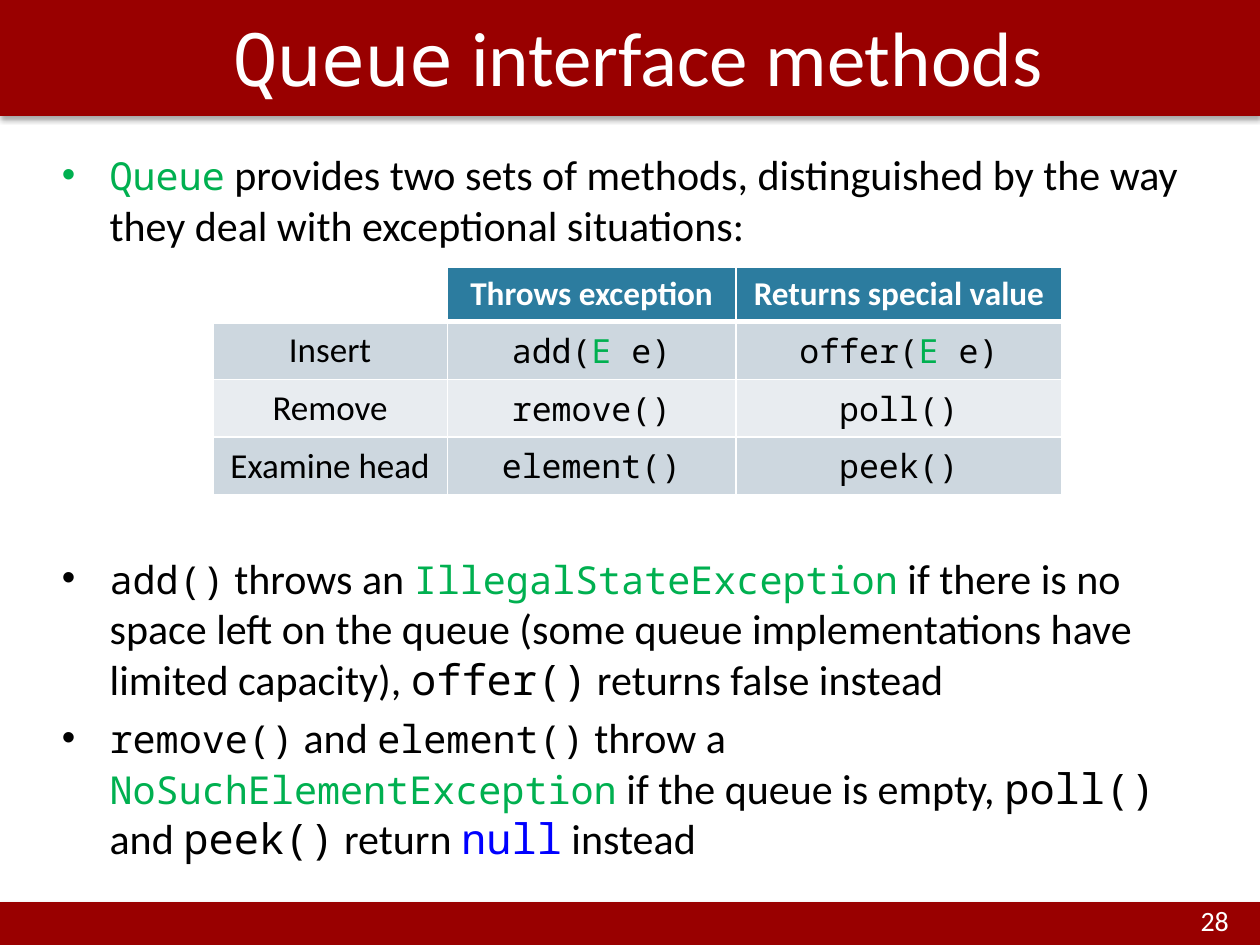
from lxml.etree import SubElement
from pptx import Presentation
from pptx.dml.color import RGBColor
from pptx.enum.shapes import MSO_SHAPE
from pptx.enum.text import MSO_ANCHOR, MSO_AUTO_SIZE, PP_ALIGN
from pptx.oxml import parse_xml
from pptx.oxml.ns import nsdecls, qn
from pptx.util import Inches, Pt

RED = RGBColor(0x99, 0x00, 0x00)
WHITE = RGBColor(0xFF, 0xFF, 0xFF)
BLACK = RGBColor(0x00, 0x00, 0x00)
GREEN = RGBColor(0x00, 0xB0, 0x50)
BLUE = RGBColor(0x00, 0x00, 0xFF)
TEAL = RGBColor(0x2C, 0x7C, 0x9F)
BANDS = (RGBColor(0xCD, 0xD7, 0xDF), RGBColor(0xE8, 0xEC, 0xF0))
SANS, MONO = "Calibri", "Noto Sans Mono"

PROSE = (SANS, 24, BLACK)
CODE = (MONO, 22, BLACK)
LARGE_CODE = (MONO, 24, BLACK)
CLASS = (MONO, 22, GREEN)
KEYWORD = (MONO, 24, BLUE)
HEADING = (SANS, 19, WHITE)
OPERATION = (SANS, 20, BLACK)
METHOD = (MONO, 19, BLACK)
TYPE = (MONO, 19, GREEN)

BULLETS = [
    (4.8, [("Queue", CLASS),
           (" provides two sets of methods, distinguished by the way they deal "
            "with exceptional situations:", PROSE)]),
    (173, [("add()", CODE), (" throws an ", PROSE), ("IllegalStateException", CLASS),
           (" if there is no space left on the queue (some queue implementations "
            "have limited capacity), ", PROSE),
           ("offer()", LARGE_CODE), (" returns false instead", PROSE)]),
    (4.8, [("remove()", CODE), (" and ", PROSE), ("element()", CODE),
           (" throw a ", PROSE), ("NoSuchElementException", CLASS),
           (" if the queue is empty, ", PROSE), ("poll()", LARGE_CODE),
           (" and ", PROSE), ("peek()", LARGE_CODE), (" return ", PROSE),
           ("null", KEYWORD), (" instead", PROSE)]),
]
METHOD_ROWS = [
    [[], [("Throws exception", HEADING)], [("Returns special value", HEADING)]],
    [[("Insert", OPERATION)],
     [("add(", METHOD), ("E", TYPE), (" e)", METHOD)],
     [("offer(", METHOD), ("E", TYPE), (" e)", METHOD)]],
    [[("Remove", OPERATION)], [("remove()", METHOD)], [("poll()", METHOD)]],
    [[("Examine head", OPERATION)], [("element()", METHOD)], [("peek()", METHOD)]],
]


def write_runs(paragraph, pieces, bold=False):
    """Add (text, style) pieces to a paragraph."""
    for text, (font, size, color) in pieces:
        run = paragraph.add_run()
        run.text = text
        run.font.name = font
        run.font.size = Pt(size)
        run.font.color.rgb = color
        run.font.bold = bold


def place(shape, left, top, width, height):
    """Move a shape to the given box."""
    shape.left, shape.top, shape.width, shape.height = left, top, width, height


def add_bar(slide, top, height):
    """Draw a full-width red bar with a soft shadow below it."""
    bar = slide.shapes.add_shape(MSO_SHAPE.RECTANGLE, 0, top, Inches(10), height)
    bar.fill.solid()
    bar.fill.fore_color.rgb = RED
    bar.line.fill.background()
    bar.shadow.inherit = False
    effects = bar.element.spPr.find(qn("a:effectLst"))
    effects.append(parse_xml(
        f'<a:outerShdw {nsdecls("a")} blurRad="{Pt(3.1)}" dist="{Pt(1.8)}" '
        'dir="5400000" rotWithShape="0"><a:srgbClr val="000000">'
        '<a:alpha val="35000"/></a:srgbClr></a:outerShdw>'))
    slide.shapes._spTree.remove(bar.element)
    slide.shapes._spTree.insert(2, bar.element)


def add_title(slide, left, top, width, height):
    """Fill the title placeholder."""
    title = slide.shapes.title
    place(title, left, top, width, height)
    frame = title.text_frame
    frame.auto_size = MSO_AUTO_SIZE.NONE
    frame.vertical_anchor = MSO_ANCHOR.MIDDLE
    frame.paragraphs[0].alignment = PP_ALIGN.CENTER
    write_runs(frame.paragraphs[0], [("Queue", (MONO, 42, WHITE)),
                                     (" interface methods", (SANS, 44, WHITE))])


def add_bullets(slide, left, top, width, height):
    """Fill the body placeholder, leaving a gap for the table."""
    body = slide.placeholders[1]
    place(body, left, top, width, height)
    frame = body.text_frame
    frame.auto_size = MSO_AUTO_SIZE.NONE
    for index, (gap, pieces) in enumerate(BULLETS):
        paragraph = frame.add_paragraph() if index else frame.paragraphs[0]
        paragraph.space_before = Pt(gap)
        properties = paragraph._p.get_or_add_pPr()
        properties.set("marL", str(Inches(0.38)))
        properties.set("indent", str(-Inches(0.38)))
        SubElement(properties, qn("a:buChar"), char="•")
        write_runs(paragraph, pieces)


def set_borders(cell, bottom):
    """Give a cell white borders with its own bottom width."""
    properties = cell._tc.get_or_add_tcPr()
    for side, width in (("L", 1), ("R", 1), ("T", 1), ("B", bottom)):
        properties.append(parse_xml(
            f'<a:ln{side} {nsdecls("a")} w="{Pt(width)}"><a:solidFill>'
            f'<a:srgbClr val="{WHITE}"/></a:solidFill></a:ln{side}>'))


def add_method_table(slide, left, top, width, height):
    """Place the table of queue methods."""
    table = slide.shapes.add_table(len(METHOD_ROWS), 3, left, top, width, height).table
    for column, column_width in zip(table.columns, (1.86, 2.29, 2.59)):
        column.width = Inches(column_width)
    for row, contents in enumerate(METHOD_ROWS):
        for column, pieces in enumerate(contents):
            cell = table.cell(row, column)
            set_borders(cell, 1 if row else 3)
            if pieces:
                cell.fill.solid()
                cell.fill.fore_color.rgb = BANDS[(row - 1) % 2] if row else TEAL
            else:
                cell.fill.background()
            cell.vertical_anchor = MSO_ANCHOR.MIDDLE
            paragraph = cell.text_frame.paragraphs[0]
            paragraph.alignment = PP_ALIGN.CENTER
            write_runs(paragraph, pieces, bold=row == 0)


def add_page_number(slide, left, top, width, height):
    """Write the page number on the bottom bar."""
    number = slide.shapes.add_textbox(left, top, width, height)
    number.text_frame.word_wrap = True
    write_runs(number.text_frame.paragraphs[0], [("28", (SANS, 16, WHITE))])


def main():
    """Build and save the slide."""
    deck = Presentation()
    deck.slide_width, deck.slide_height = Inches(10), Inches(7.5)
    slide = deck.slides.add_slide(deck.slide_layouts[1])
    add_bar(slide, Inches(-0.01), Inches(0.93))
    add_bar(slide, Inches(7.16), Inches(0.34))
    add_title(slide, Inches(0.39), Inches(-0.18), Inches(9.35), Inches(1.25))
    add_bullets(slide, Inches(0.39), Inches(1.13), Inches(9.35), Inches(5.72))
    add_method_table(slide, Inches(1.69), Inches(2.12), Inches(6.74), Inches(1.73))
    add_page_number(slide, Inches(9.43), Inches(7.12), Inches(0.49), Inches(0.37))
    deck.save("out.pptx")


if __name__ == "__main__":
    main()
